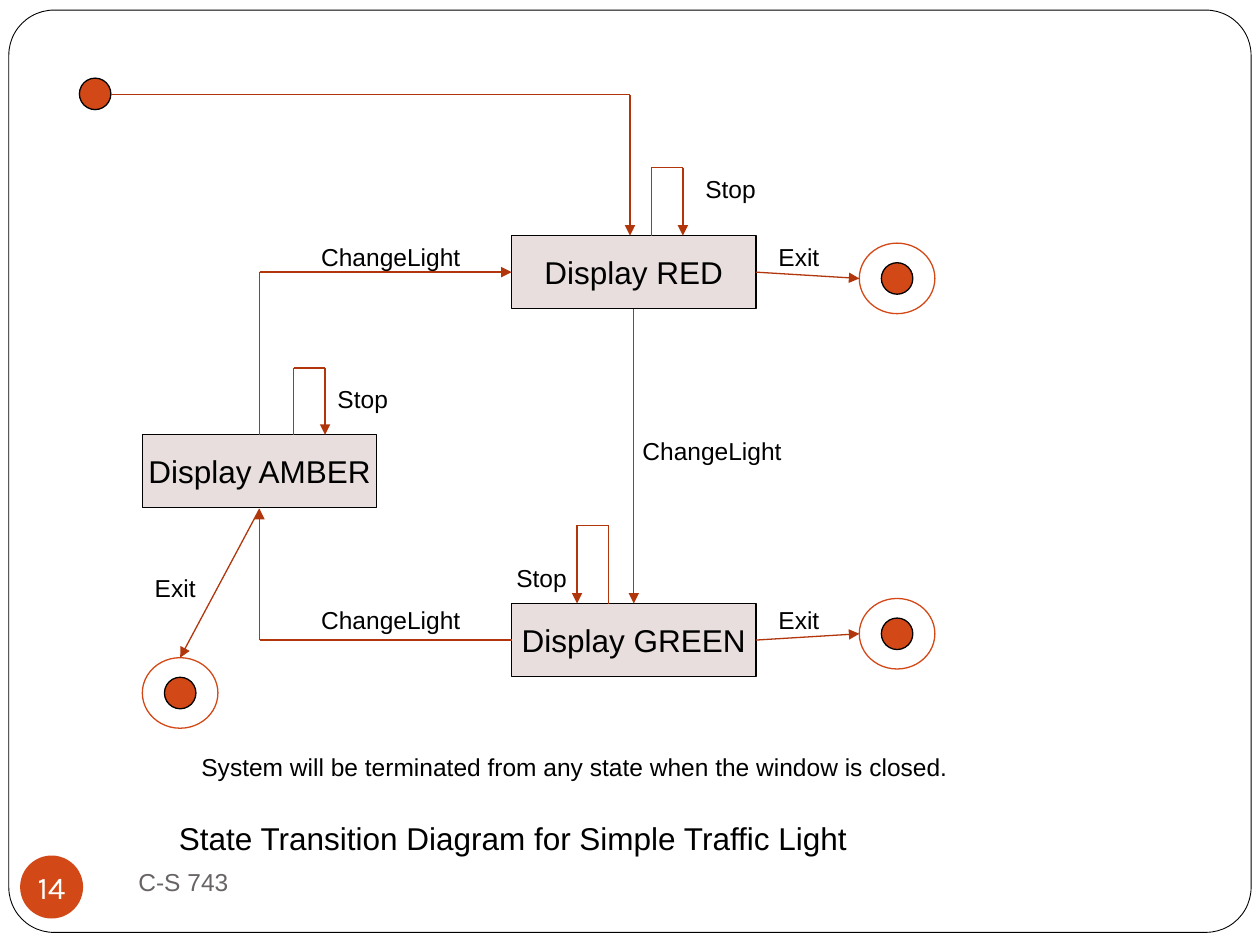
import itertools

import pptx
import pptx.dml.color
import pptx.enum.shapes
import pptx.enum.text
import pptx.oxml
import pptx.oxml.ns
import pptx.util
from pptx.util import Inches

COLOURS = {
    "ink": "000000",
    "accent": "D34817",
    "arrow": "B1360B",
    "state": "E8DEDE",
    "footer": "696464",
    "white": "FFFFFF",
}
SHAPES = pptx.enum.shapes.MSO_SHAPE
ALIGN = pptx.enum.text.PP_ALIGN
ANCHOR = pptx.enum.text.MSO_ANCHOR


def colour(name):
    """Return the named colour."""
    return pptx.dml.color.RGBColor.from_string(COLOURS[name])


def write(shape, text, size=14, ink="ink", font="Arial", align=ALIGN.LEFT,
          anchor=ANCHOR.TOP, wrap=True):
    """Put one formatted paragraph into a shape."""
    frame = shape.text_frame
    frame.text = text
    frame.word_wrap = wrap
    frame.vertical_anchor = anchor
    paragraph = frame.paragraphs[0]
    paragraph.alignment = align
    paragraph.font.size = pptx.util.Pt(size)
    paragraph.font.name = font
    paragraph.font.color.rgb = colour(ink)


def add_figure(slide, kind, left, top, width, height, fill=None, line="ink", weight=0.75):
    """Add a preset shape with the given fill and outline."""
    shape = slide.shapes.add_shape(
        kind, Inches(left), Inches(top), Inches(width), Inches(height))
    shape.shadow.inherit = False
    if fill:
        shape.fill.solid()
        shape.fill.fore_color.rgb = colour(fill)
    else:
        shape.fill.background()
    if line:
        shape.line.color.rgb = colour(line)
        shape.line.width = pptx.util.Pt(weight)
    else:
        shape.line.fill.background()
    return shape


def add_label(slide, text, left, top, width, height=0.34, **style):
    """Add a text box."""
    box = slide.shapes.add_textbox(
        Inches(left), Inches(top), Inches(width), Inches(height))
    write(box, text, **style)


def add_state(slide, text, left, top, width):
    """Add a state rectangle."""
    box = add_figure(slide, SHAPES.RECTANGLE, left, top, width, 0.58, "state")
    write(box, text, 18, align=ALIGN.CENTER, anchor=ANCHOR.MIDDLE, wrap=False)


def add_dot(slide, left, top):
    """Add the small filled circle of a start or end state."""
    add_figure(slide, SHAPES.OVAL, left, top, 0.25, 0.25, "accent")


def add_end(slide, left, top):
    """Add an end state: a dot inside a ring."""
    add_dot(slide, left + 0.175, top + 0.155)
    add_figure(slide, SHAPES.OVAL, left, top, 0.6, 0.56, line="accent")


def add_transition(slide, *points):
    """Join the points with straight lines and put an arrowhead at the last."""
    for start, end in itertools.pairwise(points):
        connector = slide.shapes.add_connector(
            pptx.enum.shapes.MSO_CONNECTOR.STRAIGHT,
            *(Inches(value) for value in start + end))
        connector.line.color.rgb = colour("arrow")
        connector.line.width = pptx.util.Pt(0.75)
        properties = connector._element.spPr
        properties.append(pptx.oxml.parse_xml(
            f"<a:effectLst {pptx.oxml.ns.nsdecls('a')}/>"))
    connector.line._get_or_add_ln().append(pptx.oxml.parse_xml(
        f"<a:tailEnd {pptx.oxml.ns.nsdecls('a')} type='triangle'/>"))


def add_loop(slide, start, end, top, base):
    """Add a transition that leaves a state and returns to it from above."""
    add_transition(slide, (start, base), (start, top), (end, top), (end, base))


def add_title(slide, text):
    """Place and format the title below the diagram."""
    title = slide.shapes.title
    title.left, title.top = Inches(1.32), Inches(6.45)
    title.width, title.height = Inches(5.93), Inches(0.4)
    write(title, text, 18)


def add_page_number(slide, text):
    """Add the page number in its disc."""
    disc = add_figure(slide, SHAPES.OVAL, 0.16, 6.79, 0.5, 0.5, "accent", None)
    write(disc, text, 18, "white", "Karla", ALIGN.CENTER, ANCHOR.MIDDLE, False)
    frame = disc.text_frame
    frame.margin_left = frame.margin_right = frame.margin_top = frame.margin_bottom = 0


def main():
    """Build the state transition slide."""
    presentation = pptx.Presentation()
    presentation.slide_width, presentation.slide_height = Inches(10), Inches(7.5)
    slide = presentation.slides.add_slide(presentation.slide_layouts[5])

    border = add_figure(slide, SHAPES.ROUNDED_RECTANGLE, 0.07, 0.08, 9.86, 7.32, weight=0.5)
    border.adjustments[0] = 0.049
    add_title(slide, "State Transition Diagram for Simple Traffic Light")
    add_label(slide, "C-S 743", 1, 6.75, 4.33, 0.5, ink="footer", anchor=ANCHOR.MIDDLE)
    add_page_number(slide, "14")

    add_dot(slide, 0.63, 0.62)
    add_state(slide, "Display AMBER", 1.13, 3.45, 1.86)
    add_state(slide, "Display RED", 4.06, 1.87, 1.94)
    add_state(slide, "Display GREEN", 4.06, 4.79, 1.94)
    for left, top in [(6.82, 1.93), (6.82, 4.75), (1.13, 5.22)]:
        add_end(slide, left, top)

    add_transition(slide, (0.88, 0.75), (5, 0.75), (5, 1.87))
    add_transition(slide, (5.03, 2.45), (5.03, 4.79))
    add_transition(slide, (4.06, 5.08), (2.06, 5.08), (2.06, 4.04))
    add_transition(slide, (2.06, 3.45), (2.06, 2.16), (4.06, 2.16))
    add_transition(slide, (6, 2.16), (6.82, 2.21))
    add_transition(slide, (6, 5.08), (6.82, 5.03))
    add_transition(slide, (2.06, 4.04), (1.43, 5.22))
    add_loop(slide, 5.17, 5.42, 1.33, 1.87)
    add_loop(slide, 4.83, 4.58, 4.17, 4.79)
    add_loop(slide, 2.33, 2.58, 2.92, 3.45)

    labels = [
        ("ChangeLight", 2.45, 1.87, 1.31),
        ("ChangeLight", 2.45, 4.75, 1.58),
        ("ChangeLight", 5, 3.41, 1.51),
        ("Exit", 6.08, 1.87, 0.6),
        ("Exit", 6.08, 4.75, 0.66),
        ("Exit", 1.13, 4.5, 0.7),
        ("Stop", 5.5, 1.33, 1),
        ("Stop", 4, 4.42, 0.67),
        ("Stop", 2.58, 3, 0.72),
        ("System will be terminated from any state when the window is closed.", 1.5, 5.92, 7.42),
    ]
    for label in labels:
        add_label(slide, *label)
    presentation.save("out.pptx")


if __name__ == "__main__":
    main()
